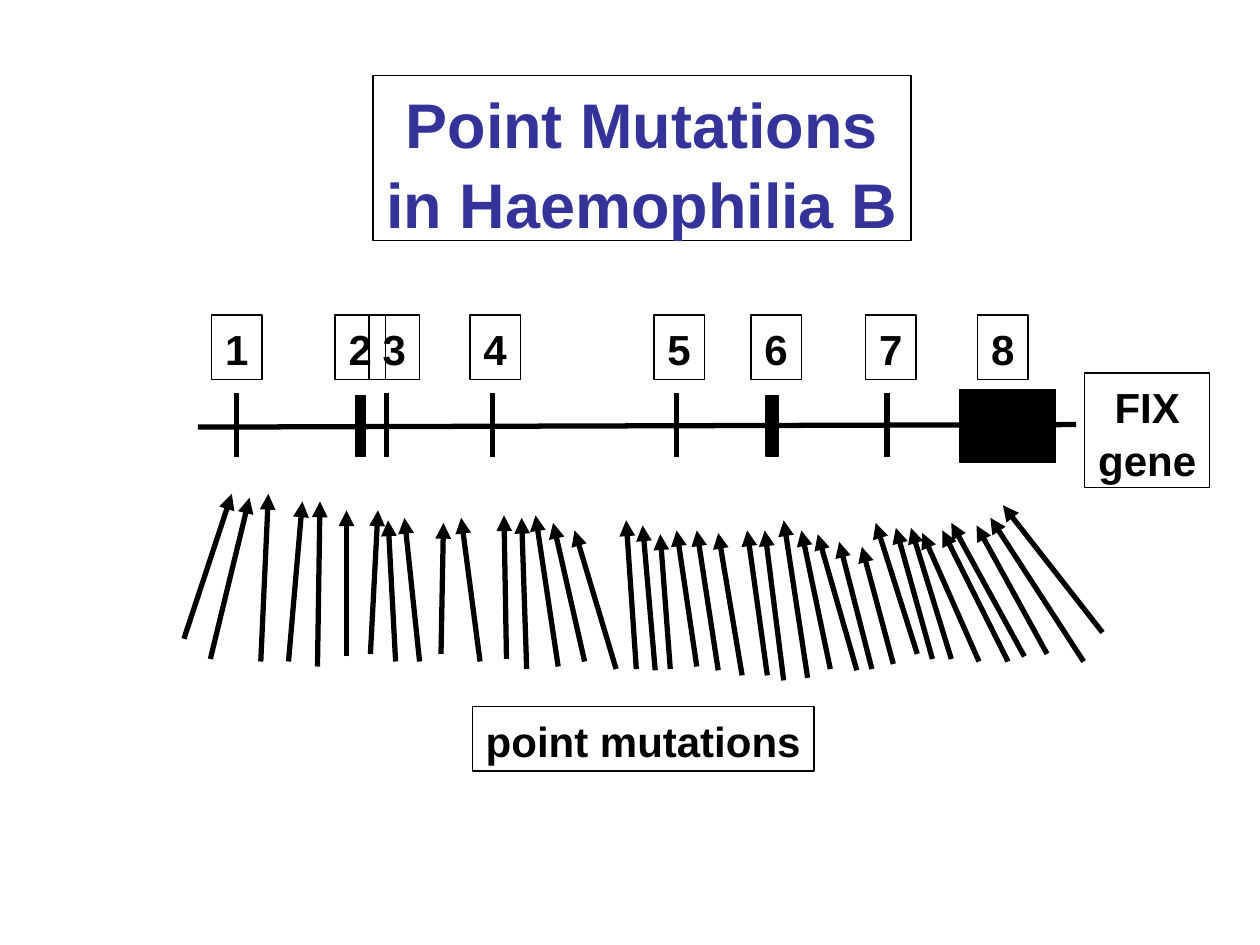
from dataclasses import dataclass

from lxml.etree import SubElement
from pptx import Presentation
from pptx.dml.color import RGBColor
from pptx.enum.shapes import MSO_CONNECTOR, MSO_SHAPE
from pptx.enum.text import MSO_ANCHOR, MSO_AUTO_SIZE, PP_ALIGN
from pptx.oxml.ns import qn
from pptx.util import Inches, Pt


@dataclass(frozen=True)
class Theme:
    font: str = "Arial"
    ink: RGBColor = RGBColor(0x00, 0x00, 0x00)
    heading: RGBColor = RGBColor(0x33, 0x33, 0x99)
    title_size: Pt = Pt(36)
    label_size: Pt = Pt(24)
    border: Pt = Pt(0.75)
    stroke: Pt = Pt(3)
    line_spacing: float = 1.05


THEME = Theme()

EXON_LABELS = {"1": 1.68, "2": 2.66, "3": 2.93, "4": 3.73,
               "5": 5.19, "6": 5.96, "7": 6.87, "8": 7.76}
THIN_EXONS = [1.88, 3.07, 3.91, 5.37, 7.04]
# left, width, height
WIDE_EXONS = [(2.82, 0.08, 0.48), (6.08, 0.1, 0.48), (7.62, 0.76, 0.58)]
EXON_MIDDLE = 3.38
THIN_TOP, THIN_BOTTOM = 3.12, 3.63

# tail x, tail y, head x, head y
MUTATIONS = [
    (1.46, 5.07, 1.84, 3.92), (1.67, 5.23, 1.98, 3.95), (2.07, 5.25, 2.13, 3.92),
    (2.29, 5.25, 2.4, 3.98), (2.52, 5.29, 2.54, 3.98), (2.75, 5.21, 2.75, 4.05),
    (2.94, 5.19, 3, 4.05), (3.14, 5.25, 3.08, 4.13), (3.33, 5.25, 3.21, 4.11),
    (3.5, 5.19, 3.52, 4.15), (3.81, 5.25, 3.66, 4.11), (4.02, 5.23, 4, 4.09),
    (4.18, 5.31, 4.14, 4.11), (4.43, 5.29, 4.25, 4.09), (4.64, 5.25, 4.39, 4.15),
    (4.89, 5.31, 4.56, 4.21), (5.05, 5.31, 4.97, 4.13), (5.2, 5.32, 5.1, 4.17),
    (5.32, 5.31, 5.24, 4.24), (5.53, 5.29, 5.37, 4.21), (5.7, 5.32, 5.53, 4.21),
    (5.89, 5.36, 5.7, 4.23), (6.09, 5.36, 5.93, 4.21), (6.22, 5.4, 6.07, 4.21),
    (6.41, 5.38, 6.22, 4.13), (6.59, 5.31, 6.36, 4.21), (6.8, 5.32, 6.49, 4.24),
    (6.92, 5.31, 6.66, 4.3), (7.09, 5.27, 6.84, 4.34), (7.28, 5.19, 6.95, 4.15),
    (7.4, 5.23, 7.11, 4.19), (7.55, 5.23, 7.23, 4.19), (7.77, 5.25, 7.32, 4.23),
    (8, 5.25, 7.48, 4.21), (8.13, 5.21, 7.55, 4.15), (8.31, 5.19, 7.75, 4.17),
    (8.6, 5.25, 7.86, 4.11), (8.75, 5.02, 7.96, 4.01),
]


def set_border(shape):
    shape.line.color.rgb = THEME.ink
    shape.line.width = THEME.border


def write_text(shape, text, size, color, anchor=MSO_ANCHOR.TOP):
    """Fill a bordered shape with centred bold text, one paragraph per line."""
    set_border(shape)
    frame = shape.text_frame
    frame.text = text
    frame.word_wrap = False
    frame.auto_size = MSO_AUTO_SIZE.NONE
    frame.vertical_anchor = anchor
    for paragraph in frame.paragraphs:
        paragraph.alignment = PP_ALIGN.CENTER
        paragraph.line_spacing = THEME.line_spacing
        font = paragraph.font
        font.name, font.size, font.bold = THEME.font, size, True
        font.color.rgb = color


def add_title(slide, text, left, top, width, height):
    title = slide.shapes.title
    title.left, title.top = Inches(left), Inches(top)
    title.width, title.height = Inches(width), Inches(height)
    write_text(title, text, THEME.title_size, THEME.heading)


def add_label(slide, text, left, top, width, height, anchor=MSO_ANCHOR.TOP):
    label = slide.shapes.add_textbox(
        Inches(left), Inches(top), Inches(width), Inches(height))
    write_text(label, text, THEME.label_size, THEME.ink, anchor)


def add_wide_exon(slide, left, width, height):
    exon = slide.shapes.add_shape(
        MSO_SHAPE.RECTANGLE, Inches(left), Inches(EXON_MIDDLE - height / 2),
        Inches(width), Inches(height))
    exon.shadow.inherit = False
    exon.fill.solid()
    exon.fill.fore_color.rgb = THEME.ink
    set_border(exon)


def add_line(slide, x1, y1, x2, y2, arrow=False):
    line = slide.shapes.add_connector(
        MSO_CONNECTOR.STRAIGHT, Inches(x1), Inches(y1), Inches(x2), Inches(y2))
    line.line.color.rgb = THEME.ink
    line.line.width = THEME.stroke
    if arrow:
        SubElement(line.line._get_or_add_ln(), qn("a:tailEnd"), type="triangle")
    SubElement(line._element.spPr, qn("a:effectLst"))


def add_gene(slide):
    add_line(slide, 1.57, 3.39, 8.54, 3.37)
    for x in THIN_EXONS:
        add_line(slide, x, THIN_TOP, x, THIN_BOTTOM)
    for exon in WIDE_EXONS:
        add_wide_exon(slide, *exon)
    for number, left in EXON_LABELS.items():
        add_label(slide, number, left, 2.5, 0.4, 0.51, MSO_ANCHOR.MIDDLE)
    add_label(slide, "FIX\ngene", 8.61, 2.96, 0.99, 0.91)


def add_mutations(slide):
    for mutation in MUTATIONS:
        add_line(slide, *mutation, arrow=True)
    add_label(slide, "point mutations", 3.75, 5.61, 2.71, 0.51)


def main():
    prs = Presentation()
    prs.slide_width, prs.slide_height = Inches(10), Inches(7.5)
    slide = prs.slides.add_slide(prs.slide_layouts[5])
    add_title(slide, "Point Mutations\nin Haemophilia B", 2.96, 0.6, 4.27, 1.31)
    add_gene(slide)
    add_mutations(slide)
    prs.save("out.pptx")


if __name__ == "__main__":
    main()
